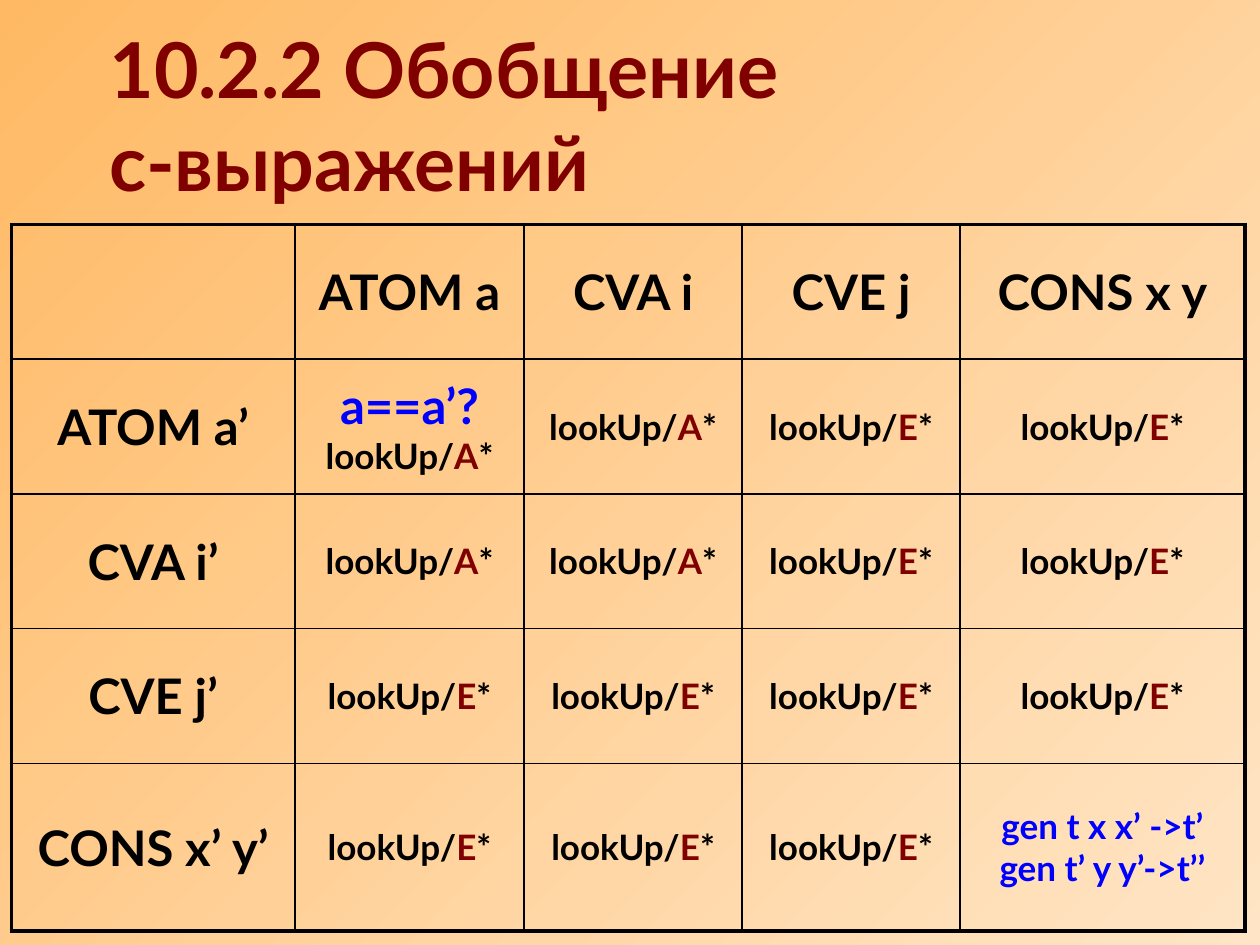
from lxml.etree import SubElement
from pptx import Presentation
from pptx.dml.color import RGBColor
from pptx.enum.text import MSO_ANCHOR as Anchor, PP_ALIGN as Align
from pptx.oxml.ns import qn
from pptx.util import Inches, Pt

FONT = "Lato"
BLACK, MAROON, BLUE, GRAY = "000000", "800000", "0000FF", "808080"
COLUMN_WIDTHS = [2.25, 1.82, 1.73, 1.73, 2.26]
ROW_HEIGHTS = [1.07] * 4 + [1.33]
COLUMN_HEADS = ["АТОМ а", "CVA i", "CVЕ j", "CONS x y"]
ROW_HEADS = ["ATOM a’", "CVA i’", "CVE j’", "CONS x’ y’"]
LOOKUP_KINDS = ["ААЕЕ", "ААЕЕ", "EEЕЕ", "ЕЕЕ"]


def color(value):
    """Turn a hex string into a colour."""
    return RGBColor.from_string(value)


def style(run, size, ink):
    """Format one run."""
    run.font.name, run.font.size, run.font.bold = FONT, Pt(size), True
    run.font.color.rgb = color(ink)


def paint_background(slide, start, end):
    """Fill the slide with a diagonal gradient."""
    fill = slide.background.fill
    fill.gradient()
    fill.gradient_angle = 315
    for stop, ink in zip(fill.gradient_stops, (start, end)):
        stop.color.rgb = color(ink)


def add_shadow(run):
    """Cast a gray shadow from the letters of a run."""
    effects = SubElement(run.font._element, qn("a:effectLst"))
    shadow = SubElement(effects, qn("a:outerShdw"), dist="35921",
                        dir="2700000", algn="ctr", rotWithShape="0")
    SubElement(shadow, qn("a:srgbClr"), val=GRAY)
    fonts = run.font._element.find(qn("a:latin"))
    fonts.addprevious(effects)


def add_title(slide, wording):
    """Add the shadowed heading."""
    frame = slide.shapes.add_textbox(
        Inches(0.77), Inches(0.28), Inches(9.12), Inches(1.25)).text_frame
    frame.word_wrap = True
    frame.vertical_anchor = Anchor.MIDDLE
    heading = frame.paragraphs[0]
    heading.text = wording
    for run in heading.runs:
        style(run, 44, MAROON)
        add_shadow(run)


def draw_borders(cell, widths):
    """Draw the left, right, top and bottom borders of a cell."""
    properties = cell._tc.get_or_add_tcPr()
    for side, width in zip("LRTB", widths):
        line = SubElement(properties, qn(f"a:ln{side}"), w=str(Pt(width)))
        fill = SubElement(line, qn("a:solidFill"))
        SubElement(fill, qn("a:srgbClr"), val=BLACK)


def lookup(kind):
    """Return the runs of a lookup rule."""
    return [("lookUp/", 20, BLACK), (kind, 20, MAROON), ("*", 20, BLACK)]


def rule_grid():
    """Return the runs of every cell, row by row."""
    grid = [[[]] + [[(head, 28, BLACK)] for head in COLUMN_HEADS]]
    for head, kinds in zip(ROW_HEADS, LOOKUP_KINDS):
        grid.append([[(head, 28, BLACK)]] + [lookup(kind) for kind in kinds])
    grid[1][1] = [("a==a’?", 28, BLUE), None] + grid[1][1]
    grid[4].append([("gen t x x’ ->t’", 20, BLUE), None,
                    ("gen t’ y y’->t’’", 20, BLUE)])
    return grid


def write_cell(cell, pieces):
    """Write runs into a cell, with None as a line break."""
    cell.vertical_anchor = Anchor.MIDDLE
    paragraph = cell.text_frame.paragraphs[0]
    paragraph.alignment = Align.CENTER
    for piece in pieces:
        if piece is None:
            paragraph.add_line_break()
            continue
        wording, size, ink = piece
        run = paragraph.add_run()
        run.text = wording
        style(run, size, ink)


def add_rule_table(slide, grid):
    """Add the table of generalisation rules."""
    last_row, last_column = len(ROW_HEIGHTS) - 1, len(COLUMN_WIDTHS) - 1
    table = slide.shapes.add_table(
        last_row + 1, last_column + 1, Inches(0.09), Inches(1.78),
        Inches(sum(COLUMN_WIDTHS)), Inches(sum(ROW_HEIGHTS))).table
    table.first_row = table.horz_banding = False
    for column, width in zip(table.columns, COLUMN_WIDTHS):
        column.width = Inches(width)
    for row, height in zip(table.rows, ROW_HEIGHTS):
        row.height = Inches(height)
    for r, rules in enumerate(grid):
        for c, pieces in enumerate(rules):
            cell = table.cell(r, c)
            outer = (c == 0, c == last_column, r == 0, r == last_row)
            draw_borders(cell, [2.25 if edge else 1 for edge in outer])
            cell.fill.background()
            write_cell(cell, pieces)


def main():
    """Build and save the slide."""
    deck = Presentation()
    deck.slide_width, deck.slide_height = Inches(10), Inches(7.5)
    slide = deck.slides.add_slide(deck.slide_layouts[6])
    paint_background(slide, "FFB964", "FFE5C5")
    add_title(slide, "10.2.2 Обобщение\vc-выражений")
    add_rule_table(slide, rule_grid())
    deck.save("out.pptx")


if __name__ == "__main__":
    main()
